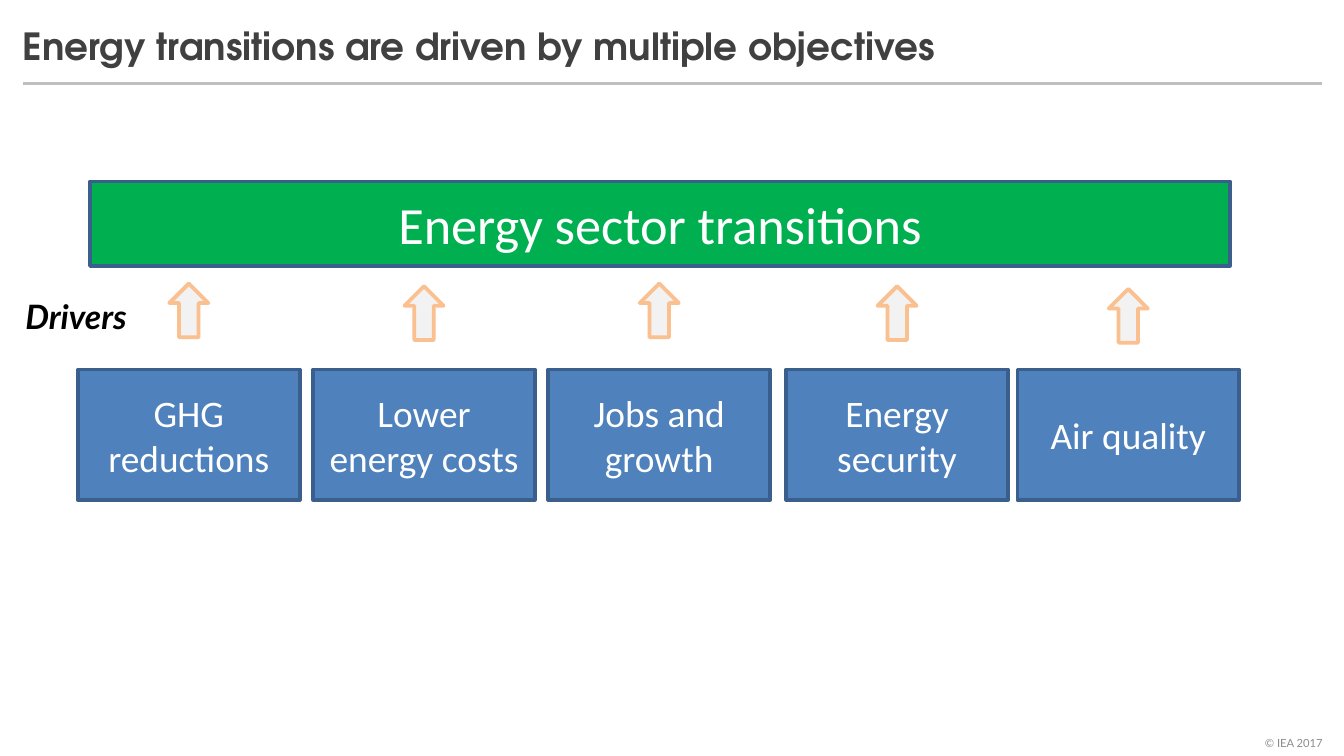
from dataclasses import dataclass

from lxml.etree import SubElement
from pptx import Presentation
from pptx.dml.color import RGBColor
from pptx.enum.shapes import MSO_CONNECTOR, MSO_SHAPE as Preset
from pptx.enum.text import MSO_ANCHOR as Anchor, PP_ALIGN as Align
from pptx.oxml.ns import qn
from pptx.util import Inches, Pt

WHITE = RGBColor(0xFF, 0xFF, 0xFF)
BLACK = RGBColor(0, 0, 0)
TITLE_GREY = RGBColor(0x40, 0x40, 0x40)
RULE_GREY = RGBColor(0xBF, 0xBF, 0xBF)
FOOTER_GREY = RGBColor(0x8C, 0x8C, 0x8C)
GREEN = RGBColor(0x00, 0xB0, 0x50)
BLUE = RGBColor(0x4F, 0x81, 0xBD)
BLUE_EDGE = RGBColor(0x3A, 0x5F, 0x8C)
ARROW_FILL = RGBColor(0xF2, 0xF2, 0xF2)
ARROW_EDGE = RGBColor(0xFA, 0xC0, 0x90)

SLIDE_WIDTH = 10
SLIDE_HEIGHT = SLIDE_WIDTH * 9 / 16
DRIVER_TOP, DRIVER_WIDTH, DRIVER_HEIGHT = 2.75, 1.65, 0.97
ARROW_WIDTH, ARROW_HEIGHT = 0.29, 0.4

TITLE_FORMAT = {"name": "TeX Gyre Adventor", "size": Pt(20), "bold": True}
BANNER_FORMAT = {"name": "Calibri", "size": Pt(28)}
DRIVER_FORMAT = {"name": "Calibri", "size": Pt(20)}
LABEL_FORMAT = {"name": "Lato", "size": Pt(18), "bold": True, "italic": True}
FOOTER_FORMAT = {"name": "Lato", "size": Pt(6)}


@dataclass(frozen=True)
class Area:
    left: float
    top: float
    width: float
    height: float

    def lengths(self) -> list:
        return [Inches(value) for value in (self.left, self.top, self.width, self.height)]


@dataclass(frozen=True)
class Driver:
    name: str
    left: float
    arrow_top: float


DRIVERS = [
    Driver("GHG reductions", 0.58, 2.11),
    Driver("Lower energy costs", 2.33, 2.13),
    Driver("Jobs and growth", 4.08, 2.11),
    Driver("Energy security", 5.85, 2.13),
    Driver("Air quality", 7.57, 2.15),
]


def write(shape, text: str, font_format: dict, color: RGBColor,
          align: Align = Align.LEFT, anchor: Anchor = Anchor.MIDDLE) -> None:
    frame = shape.text_frame
    frame.word_wrap = True
    frame.vertical_anchor = anchor
    para = frame.paragraphs[0]
    para.alignment = align
    span = para.add_run()
    span.text = text
    for attribute, value in font_format.items():
        setattr(span.font, attribute, value)
    span.font.color.rgb = color


def add_text(page, area: Area, *args, **options) -> None:
    write(page.shapes.add_textbox(*area.lengths()), *args, **options)


def add_preset(page, preset: Preset, area: Area, fill: RGBColor, edge: RGBColor):
    shape = page.shapes.add_shape(preset, *area.lengths())
    shape.shadow.inherit = False
    shape.fill.solid()
    shape.fill.fore_color.rgb = fill
    shape.line.color.rgb = edge
    shape.line.width = Pt(2)
    return shape


def add_box(page, area: Area, text: str, font_format: dict, fill: RGBColor) -> None:
    box = add_preset(page, Preset.RECTANGLE, area, fill, BLUE_EDGE)
    write(box, text, font_format, WHITE, Align.CENTER)


def add_title_rule(page) -> None:
    rule = page.shapes.add_connector(
        MSO_CONNECTOR.STRAIGHT, Inches(0.17), Inches(0.62), Inches(9.84), Inches(0.62))
    rule.line.color.rgb = RULE_GREY
    rule.line.width = Pt(1.5)
    SubElement(rule._element.spPr, qn("a:effectLst"))


def add_driver(page, driver: Driver) -> None:
    """Draw a driver box and the upward arrow centred above it."""
    add_box(page, Area(driver.left, DRIVER_TOP, DRIVER_WIDTH, DRIVER_HEIGHT),
            driver.name, DRIVER_FORMAT, BLUE)
    arrow_left = driver.left + (DRIVER_WIDTH - ARROW_WIDTH) / 2
    arrow = add_preset(page, Preset.DOWN_ARROW,
                       Area(arrow_left, driver.arrow_top, ARROW_WIDTH, ARROW_HEIGHT),
                       ARROW_FILL, ARROW_EDGE)
    arrow.rotation = 180


def main() -> None:
    deck = Presentation()
    deck.slide_width, deck.slide_height = Inches(SLIDE_WIDTH), Inches(SLIDE_HEIGHT)
    page = deck.slides.add_slide(deck.slide_layouts[6])

    add_text(page, Area(9.21, 5.39, 0.73, 0.27), "© IEA 2017",
             FOOTER_FORMAT, FOOTER_GREY, align=Align.RIGHT)
    add_title_rule(page)
    add_text(page, Area(0.07, 0.12, 9.08, 0.48),
             "Energy transitions are driven by multiple objectives",
             TITLE_FORMAT, TITLE_GREY, anchor=Anchor.TOP)
    add_box(page, Area(0.67, 1.35, 8.48, 0.63), "Energy sector transitions",
            BANNER_FORMAT, GREEN)
    for driver in DRIVERS:
        add_driver(page, driver)
    add_text(page, Area(0.09, 2.15, 1.16, 0.4), "Drivers",
             LABEL_FORMAT, BLACK, anchor=Anchor.TOP)

    deck.save("out.pptx")


if __name__ == "__main__":
    main()
